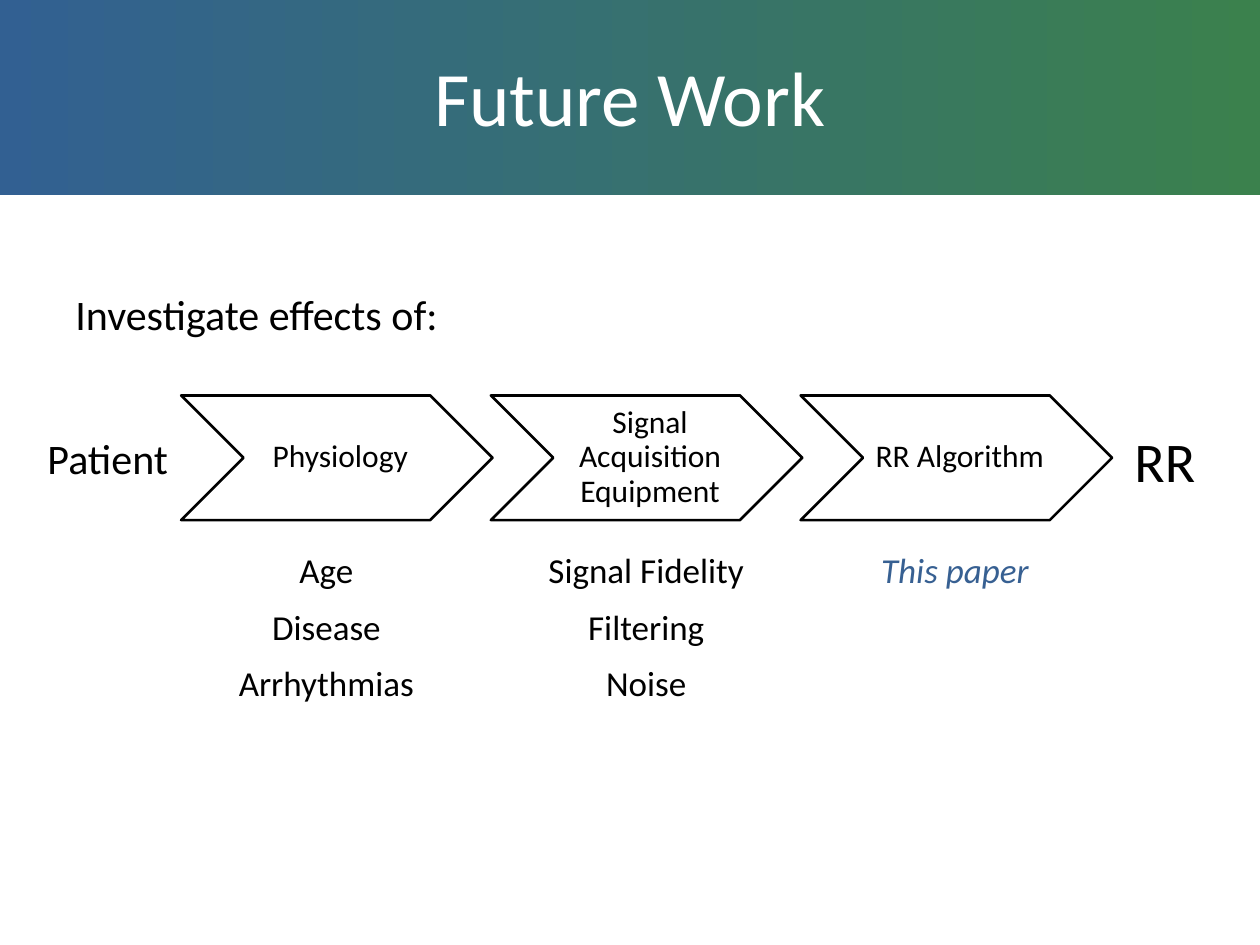
import pptx
import pptx.util
import pptx.dml.color
import pptx.enum.shapes
import pptx.enum.text

Pt = pptx.util.Pt
ALIGN = pptx.enum.text.PP_ALIGN
ANCHOR = pptx.enum.text.MSO_ANCHOR
SHAPE = pptx.enum.shapes.MSO_SHAPE


def color(hex_string):
    return pptx.dml.color.RGBColor.from_string(hex_string)


def add_text(box, lines, size, ink="000000", align=ALIGN.CENTER, anchor=ANCHOR.TOP,
             insets=(7.2, 3.6, 7.2, 3.6), spacing=1.0, before=0, italic=False):
    text_box = slide.shapes.add_textbox(*[Pt(length) for length in box])
    frame = text_box.text_frame
    frame.word_wrap = True
    frame.vertical_anchor = anchor
    frame.margin_left, frame.margin_top, frame.margin_right, frame.margin_bottom = map(Pt, insets)
    frame.text = "\n".join(lines)
    for paragraph in frame.paragraphs:
        paragraph.alignment = align
        paragraph.line_spacing = spacing
        paragraph.space_before = Pt(before)
        font = paragraph.runs[0].font
        font.name = "Calibri"
        font.size = Pt(size)
        font.italic = italic
        font.color.rgb = color(ink)


presentation = pptx.Presentation()
presentation.slide_width = Pt(720)
presentation.slide_height = Pt(540)
slide = presentation.slides.add_slide(presentation.slide_layouts[6])

# Title band
band = slide.shapes.add_shape(SHAPE.RECTANGLE, Pt(-2.9), Pt(0), Pt(725.8), Pt(111.5))
band.shadow.inherit = False
band.line.fill.background()
band.fill.gradient()
band.fill.gradient_angle = 0
for stop, position, shade in zip(band.fill.gradient_stops, (0, 1), ("326092", "3B814D")):
    stop.position = position
    stop.color.rgb = color(shade)
add_text((36, 9.4, 648, 90), ["Future Work"], 44, ink="FFFFFF", anchor=ANCHOR.MIDDLE)

# Introduction
add_text((36, 158.4, 648, 42.5), ["Investigate effects of:"], 24,
         align=ALIGN.LEFT, spacing=1.1, before=12)

# Processing stages, each with the factors to study: name, factors, factor box left, ink
stages = [
    ("Physiology", ["Age", "Disease", "Arrhythmias"], 103, "000000"),
    ("Signal Acquisition Equipment", ["Signal Fidelity", "Filtering", "Noise"], 285.8, "000000"),
    ("RR Algorithm", ["This paper"], 462.2, "376092"),
]
stage_left, stage_top, stage_width, stage_height = 103.5, 226, 178, 71.2
stage_pitch = 177
for index, (name, factors, factors_left, ink) in enumerate(stages):
    left = stage_left + index * stage_pitch
    chevron = slide.shapes.add_shape(SHAPE.CHEVRON, Pt(left), Pt(stage_top),
                                     Pt(stage_width), Pt(stage_height))
    chevron.shadow.inherit = False
    chevron.fill.background()
    chevron.line.color.rgb = color("000000")
    chevron.line.width = Pt(1.5)
    add_text((left + stage_height / 2, stage_top, stage_width - stage_height, stage_height),
             [name], 18, anchor=ANCHOR.MIDDLE, insets=(6, 2, 2, 2), spacing=0.9)
    add_text((factors_left, 307.5, 167, 194.4), factors, 20, ink=ink,
             spacing=1.1, before=6, italic=ink != "000000")

# Input and output of the chain
add_text((-0.7, 243.4, 124.6, 36), ["Patient"], 24)
add_text((629.3, 214.6, 72.7, 96.5), ["RR"], 32, anchor=ANCHOR.MIDDLE)

presentation.save("out.pptx")
